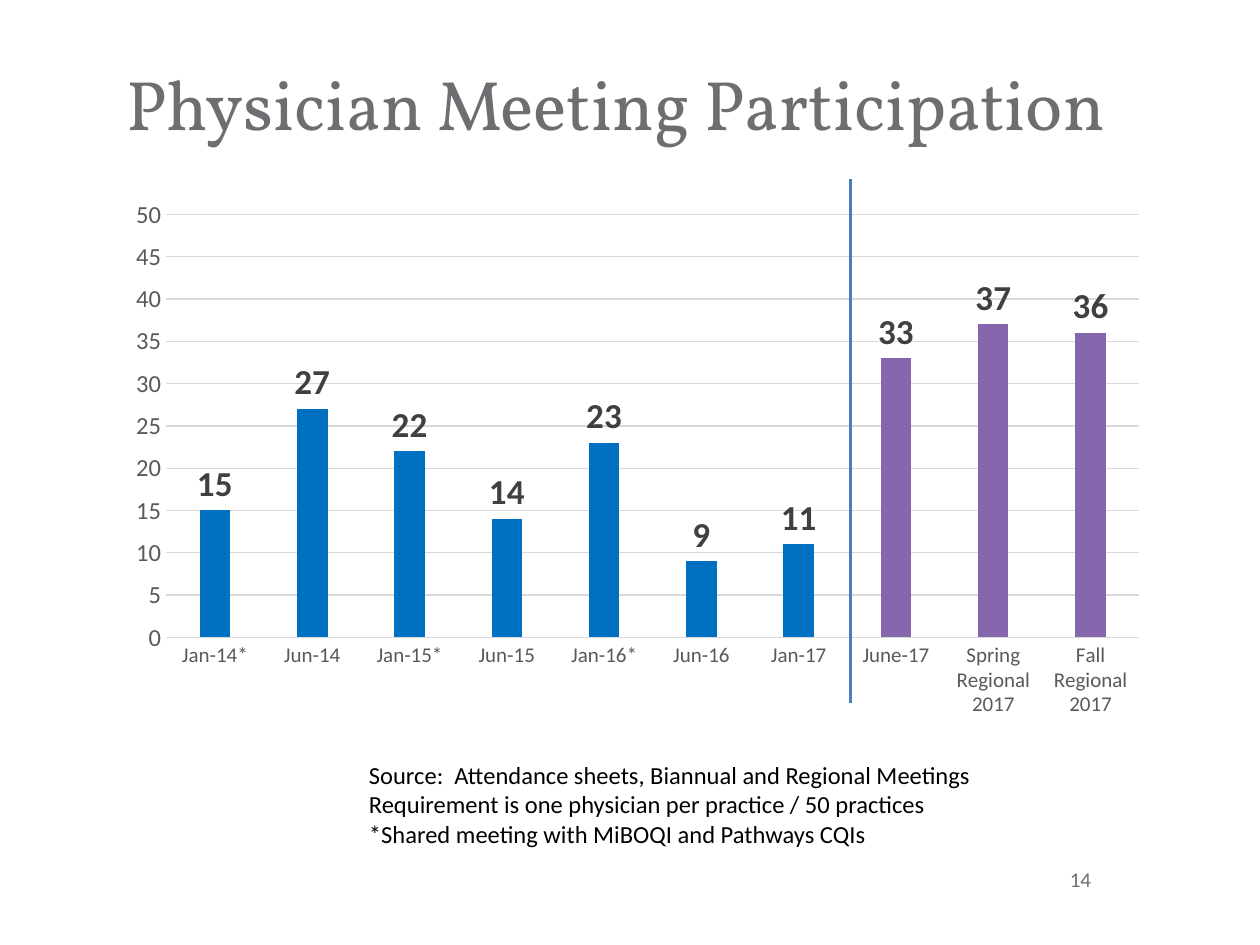
"""Build the physician meeting participation slide."""
from lxml import etree
from pptx import Presentation
from pptx.chart.data import CategoryChartData as Data
from pptx.dml.color import RGBColor
from pptx.enum.chart import XL_CHART_TYPE as Kind, XL_LABEL_POSITION as Spot, XL_TICK_MARK as Tick
from pptx.enum.shapes import MSO_CONNECTOR as Link
from pptx.enum.text import MSO_ANCHOR as Anchor, MSO_AUTO_SIZE as Fit, PP_ALIGN as Align
from pptx.oxml import parse_xml
from pptx.oxml.ns import qn
from pptx.util import Inches, Pt


def style(font, size, color, name="Calibri", bold=False):
    """Set the look of a font."""
    font.size, font.name, font.bold = Pt(size), name, bold
    font.color.rgb = RGBColor.from_string(color)


def paint(fill, color):
    """Fill with one solid colour."""
    fill.solid()
    fill.fore_color.rgb = RGBColor.from_string(color)


deck = Presentation()
deck.slide_width, deck.slide_height = Inches(10), Inches(7.5)
slide = deck.slides.add_slide(deck.slide_layouts[5])
shapes = slide.shapes

counts = {
    "Jan-14*": 15, "Jun-14": 27, "Jan-15*": 22, "Jun-15": 14, "Jan-16*": 23,
    "Jun-16": 9, "Jan-17": 11, "June-17": 33,
    "Spring Regional 2017": 37, "Fall Regional 2017": 36,
}
data = Data()
data.categories = list(counts)
data.add_series("Series 1", list(counts.values()))
chart = shapes.add_chart(
    Kind.COLUMN_CLUSTERED, Inches(0.92), Inches(1.2), Inches(8.33), Inches(4.88), data
).chart
chart.has_legend = chart.has_title = False
style(chart.font, 10, "000000")

months, scale = chart.category_axis, chart.value_axis
for axis, size in ((months, 12), (scale, 14)):
    axis.major_tick_mark = axis.minor_tick_mark = Tick.NONE
    style(axis.tick_labels.font, size, "595959")
scale.minimum_scale, scale.maximum_scale, scale.major_unit = 0, 50, 5
scale.format.line.fill.background()
for line in (months.format.line, scale.major_gridlines.format.line):
    line.width = Pt(0.75)
    paint(line.fill, "D9D9D9")

plot = chart.plots[0]
plot.gap_width, plot.overlap, plot.vary_by_categories = 219, -27, False
bars = plot.series[0]
paint(bars.format.fill, "0070C0")
for spot in range(7, 10):
    paint(bars.points[spot].format.fill, "8666AC")
labels = bars.data_labels
labels.show_value, labels.position = True, Spot.OUTSIDE_END
style(labels.font, 20, "404040", bold=True)

area = chart._chartSpace.chart.plotArea
for old in area.findall(qn("c:layout")):
    area.remove(old)
layout = parse_xml(
    '<c:layout xmlns:c="http://schemas.openxmlformats.org/drawingml/2006/chart"><c:manualLayout/></c:layout>'
)
rules = {"layoutTarget": "inner", "xMode": "edge", "yMode": "edge",
         "x": 0.048, "y": 0.103, "w": 0.927, "h": 0.688}
for tag, value in rules.items():
    etree.SubElement(layout[0], qn(f"c:{tag}")).set("val", str(value))
area.insert(0, layout)

page = shapes.add_textbox(Inches(6.33), Inches(6.68), Inches(2.33), Inches(0.4)).text_frame
page.margin_left = page.margin_right = page.margin_top = page.margin_bottom = 0
page.word_wrap, page.vertical_anchor = True, Anchor.BOTTOM
page.paragraphs[0].alignment = Align.RIGHT
run = page.paragraphs[0].add_run()
run.text = "14"
style(run.font, 12, "6D6E71")

title = shapes.title
title.left, title.top, title.width, title.height = Inches(1), Inches(0.44), Inches(7.92), Inches(0.67)
frame = title.text_frame
frame.margin_left = frame.margin_right = frame.margin_bottom = 0
frame.margin_top = Inches(0.04)
frame.word_wrap, frame.vertical_anchor, frame.auto_size = True, Anchor.TOP, Fit.NONE
frame.paragraphs[0].alignment = Align.LEFT
run = frame.paragraphs[0].add_run()
run.text = "Physician Meeting Participation"
style(run.font, 40, "6D6E71", "Vollkorn")

box = shapes.add_textbox(Inches(2.83), Inches(5.98), Inches(5.03), Inches(0.81))
paint(box.fill, "FFFFFF")
note = box.text_frame
note.word_wrap, note.auto_size = False, Fit.SHAPE_TO_FIT_TEXT
lines = (
    "Source:  Attendance sheets, Biannual and Regional Meetings",
    "Requirement is one physician per practice / 50 practices",
    "*Shared meeting with MiBOQI and Pathways CQIs",
)
for row, text in enumerate(lines):
    para = note.add_paragraph() if row else note.paragraphs[0]
    run = para.add_run()
    run.text = text
    style(run.font, 14, "000000")

split = shapes.add_connector(Link.STRAIGHT, Inches(6.75), Inches(1.42), Inches(6.75), Inches(5.58))
split.line.width = Pt(2.25)
paint(split.line.fill, "4B7EBC")
etree.SubElement(split._element.spPr, qn("a:effectLst"))

deck.save("out.pptx")
